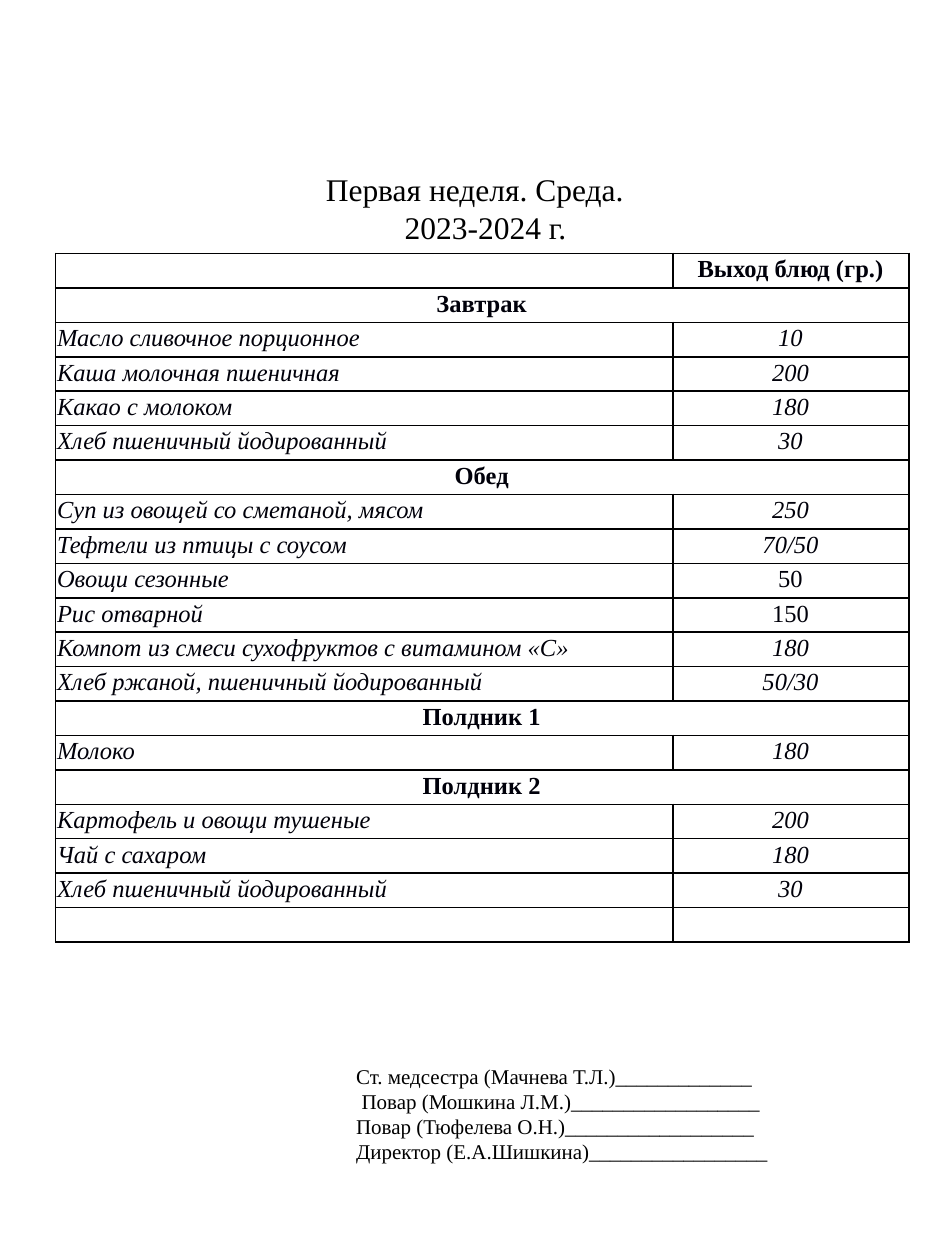
from lxml.etree import SubElement
from pptx import Presentation
from pptx.dml.color import RGBColor
from pptx.enum.text import PP_ALIGN as Align
from pptx.oxml.ns import qn
from pptx.util import Cm, Pt

FONT = "Times New Roman"
BLACK = "000000"
INK = "00000A"
RULE = "000001"
ROW_HEIGHT = 0.68

MENU = [
    ("Завтрак", [
        ("Масло сливочное порционное", "10"),
        ("Каша молочная пшеничная", "200"),
        ("Какао с молоком", "180"),
        ("Хлеб пшеничный йодированный", "30"),
    ]),
    ("Обед", [
        ("Суп из овощей со сметаной, мясом", "250"),
        ("Тефтели из птицы с соусом", "70/50"),
        ("Овощи сезонные", "50"),
        ("Рис отварной", "150"),
        ("Компот из смеси сухофруктов с витамином «С»", "180"),
        ("Хлеб ржаной, пшеничный йодированный", "50/30"),
    ]),
    ("Полдник 1", [("Молоко", "180")]),
    ("Полдник 2", [
        ("Картофель и овощи тушеные", "200"),
        ("Чай с сахаром", "180"),
        ("Хлеб пшеничный йодированный", "30"),
    ]),
]
UPRIGHT = {"50", "150"}

TITLE = [("Первая неделя. Среда.", 0), ("2023-2024 г.", 1.59)]
SIGNATURES = [
    ("Ст. медсестра (Мачнева Т.Л.)_____________", 0),
    ("Повар (Мошкина Л.М.)__________________", 0.11),
    ("Повар (Тюфелева О.Н.)__________________", 0),
    ("Директор (Е.А.Шишкина)_________________", 0),
]


def color(value):
    """Turn a hex string into a colour."""
    return RGBColor.from_string(value)


def style_runs(para, size, ink, bold=False, italic=False):
    """Format every run of a paragraph."""
    for span in para.runs:
        span.font.name = FONT
        span.font.size = Pt(size)
        span.font.bold = bold
        span.font.italic = italic
        span.font.color.rgb = color(ink)


def add_lines(page, left, top, width, height, lines, size):
    """Add a text box of (text, indent) lines."""
    box = page.shapes.add_textbox(Cm(left), Cm(top), Cm(width), Cm(height))
    frame = box.text_frame
    frame.word_wrap = True
    frame.text = "\n".join(text for text, _ in lines)
    for para, (_, indent) in zip(frame.paragraphs, lines):
        if indent:
            para._p.get_or_add_pPr().set("marL", str(Cm(indent)))
        style_runs(para, size, BLACK)


def add_borders(cell):
    """Rule all four sides of a cell."""
    properties = cell._tc.get_or_add_tcPr()
    for side in ("lnL", "lnR", "lnT", "lnB"):
        line = SubElement(properties, qn(f"a:{side}"), w=str(Pt(1)))
        fill = SubElement(line, qn("a:solidFill"))
        SubElement(fill, qn("a:srgbClr"), val=RULE)


def fill_cell(cell, text, centred, bold=False, italic=False):
    """Write and format one table cell."""
    cell.margin_left = Cm(0.03)
    cell.margin_right = cell.margin_top = cell.margin_bottom = Cm(0.05)
    add_borders(cell)
    cell.fill.background()
    para = cell.text_frame.paragraphs[0]
    para.text = text
    para.alignment = Align.CENTER if centred else Align.LEFT
    style_runs(para, 14, INK, bold, italic)
    end = SubElement(para._p, qn("a:endParaRPr"), sz="1400")
    SubElement(end, qn("a:latin"), typeface=FONT)


def add_menu(page, left, top, widths):
    """Add the menu table with a spanning row for each meal."""
    rows = [("", "Выход блюд (гр.)", True)]
    for meal, dishes in MENU:
        rows.append((meal, "", True))
        rows.extend((dish, portion, False) for dish, portion in dishes)
    rows.append(("", "", False))

    table = page.shapes.add_table(
        len(rows), len(widths), Cm(left), Cm(top),
        Cm(sum(widths)), Cm(ROW_HEIGHT * len(rows))).table
    table.first_row = False
    table.horz_banding = False
    for column, width in zip(table.columns, widths):
        column.width = Cm(width)
    for index, (name, portion, heading) in enumerate(rows):
        table.rows[index].height = Cm(ROW_HEIGHT)
        first, second = table.cell(index, 0), table.cell(index, 1)
        fill_cell(first, name, heading, heading, not heading)
        fill_cell(second, portion, True, heading,
                  not heading and portion not in UPRIGHT)
        if heading and name:
            first.merge(second)


def main():
    """Build the menu page."""
    deck = Presentation()
    deck.slide_width, deck.slide_height = Cm(19.05), Cm(25.4)
    page = deck.slides.add_slide(deck.slide_layouts[6])
    add_lines(page, 6.32, 3.3, 8.99, 1.8, TITLE, 18)
    add_menu(page, 1.12, 5.11, [12.45, 4.75])
    add_lines(page, 6.93, 21.31, 10.01, 3.07, SIGNATURES, 12)
    deck.save("out.pptx")


if __name__ == "__main__":
    main()
